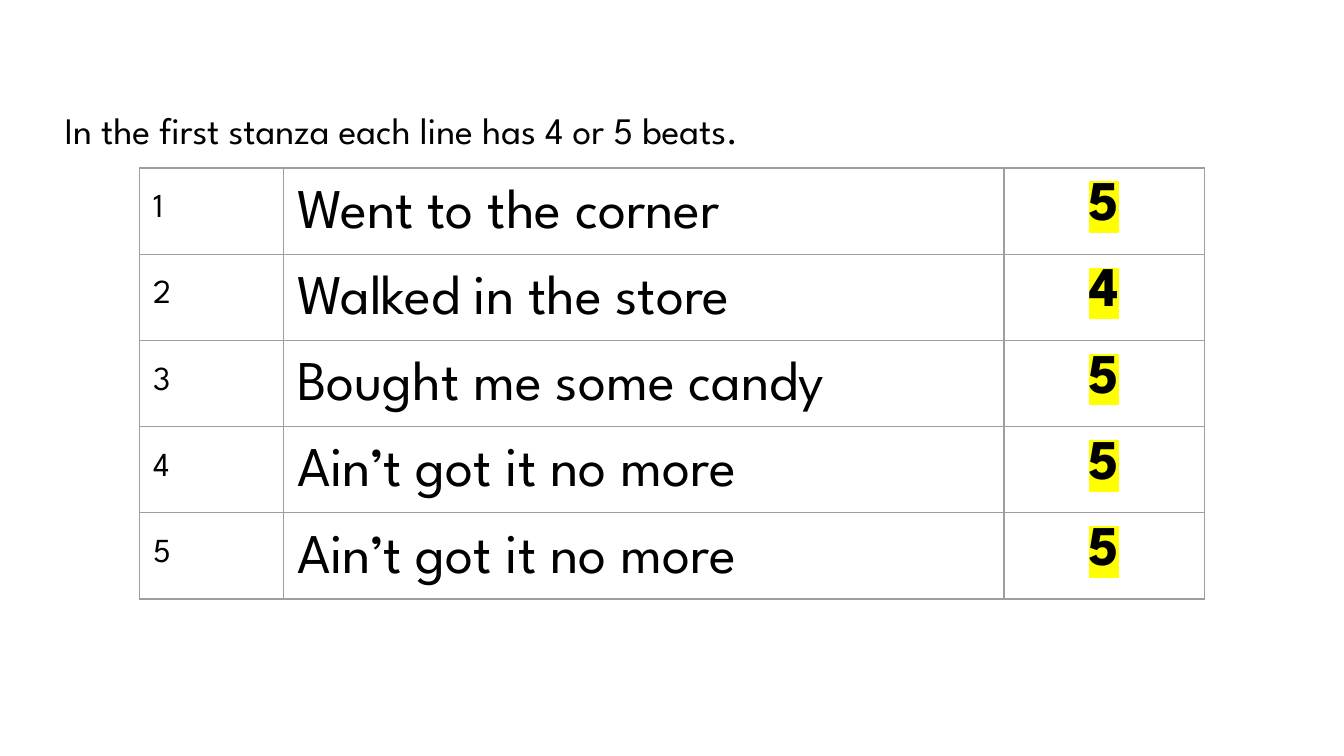
import pptx
import pptx.dml.color
import pptx.enum.text
import pptx.oxml
import pptx.oxml.ns
import pptx.util
from pptx.util import Inches

FONT = "League Spartan"
ALIGN = pptx.enum.text.PP_ALIGN
POEM_LINES = [
    ("Went to the corner", 5),
    ("Walked in the store", 4),
    ("Bought me some candy", 5),
    ("Ain’t got it no more", 5),
    ("Ain’t got it no more", 5),
]
COLUMN_WIDTHS = (1.07, 5.36, 1.49)
ROW_HEIGHT = 0.64


def color(hex_value):
    return pptx.dml.color.RGBColor.from_string(hex_value)


def add_xml(parent, tag, content, attributes=""):
    namespace = pptx.oxml.ns.nsdecls("a")
    parent.append(pptx.oxml.parse_xml(
        f"<a:{tag} {namespace} {attributes}>{content}</a:{tag}>"))


def format_paragraph(paragraph, size, spacing=1.15, bold=False, align=ALIGN.LEFT):
    paragraph.alignment = align
    paragraph.line_spacing = spacing
    paragraph.space_before = pptx.util.Pt(0)
    font = paragraph.font
    font.name, font.size, font.bold = FONT, pptx.util.Pt(size), bold
    font.color.rgb = color("000000")


def format_cell(cell, top_margin=0.1):
    cell.margin_left = cell.margin_right = cell.margin_bottom = Inches(0.1)
    cell.margin_top = Inches(top_margin)
    properties = cell._tc.get_or_add_tcPr()
    for side in ("lnL", "lnR", "lnT", "lnB"):
        add_xml(properties, side,
                '<a:solidFill><a:srgbClr val="9E9E9E"/></a:solidFill>', 'w="9525"')
    cell.fill.background()


def add_intro(slide, left, top, width, height):
    intro = slide.placeholders[1]
    intro.left, intro.top = Inches(left), Inches(top)
    intro.width, intro.height = Inches(width), Inches(height)
    frame = intro.text_frame
    frame.word_wrap = True
    frame.auto_size = pptx.enum.text.MSO_AUTO_SIZE.NONE
    frame.margin_left = frame.margin_right = Inches(0.1)
    frame.margin_top = frame.margin_bottom = Inches(0.1)
    frame.text = "In the first stanza each line has 4 or 5 beats."
    paragraph = frame.paragraphs[0]
    # Plain body text without bullet or hanging indent
    properties = paragraph._p.get_or_add_pPr()
    properties.set("marL", "0")
    properties.set("indent", "0")
    add_xml(properties, "buNone", "")
    format_paragraph(paragraph, 20)


def add_beat_table(slide, left, top):
    table = slide.shapes.add_table(
        len(POEM_LINES), len(COLUMN_WIDTHS), Inches(left), Inches(top),
        Inches(sum(COLUMN_WIDTHS)), Inches(ROW_HEIGHT * len(POEM_LINES))).table
    table.first_row = table.horz_banding = False
    for column, width in zip(table.columns, COLUMN_WIDTHS):
        column.width = Inches(width)

    for index, (line, beats) in enumerate(POEM_LINES):
        table.rows[index].height = Inches(ROW_HEIGHT)
        number_cell, line_cell, beats_cell = table.rows[index].cells
        # Line number, set slightly lower than the other cells
        number_cell.text = str(index + 1)
        format_cell(number_cell, top_margin=0.16)
        format_paragraph(number_cell.text_frame.paragraphs[0], 18)
        # Line of the poem
        line_cell.text = line
        format_cell(line_cell)
        format_paragraph(line_cell.text_frame.paragraphs[0], 30)
        # Highlighted beat count
        beats_cell.text = str(beats)
        format_cell(beats_cell)
        count = beats_cell.text_frame.paragraphs[0]
        format_paragraph(count, 30, spacing=1.0, bold=True, align=ALIGN.CENTER)
        add_xml(count.runs[0]._r.get_or_add_rPr(), "highlight",
                '<a:srgbClr val="FFFF00"/>')


def main():
    presentation = pptx.Presentation()
    # Widescreen, 16:9
    presentation.slide_width = Inches(10)
    presentation.slide_height = Inches(10 * 9 / 16)
    slide = presentation.slides.add_slide(presentation.slide_layouts[1])
    slide.background.fill.solid()
    slide.background.fill.fore_color.rgb = color("FFFFFF")
    # The slide has no title
    title = slide.shapes.title._element
    title.getparent().remove(title)
    add_intro(slide, 0.38, 0.65, 9.28, 4.32)
    add_beat_table(slide, 1.04, 1.25)
    presentation.save("out.pptx")


if __name__ == "__main__":
    main()
